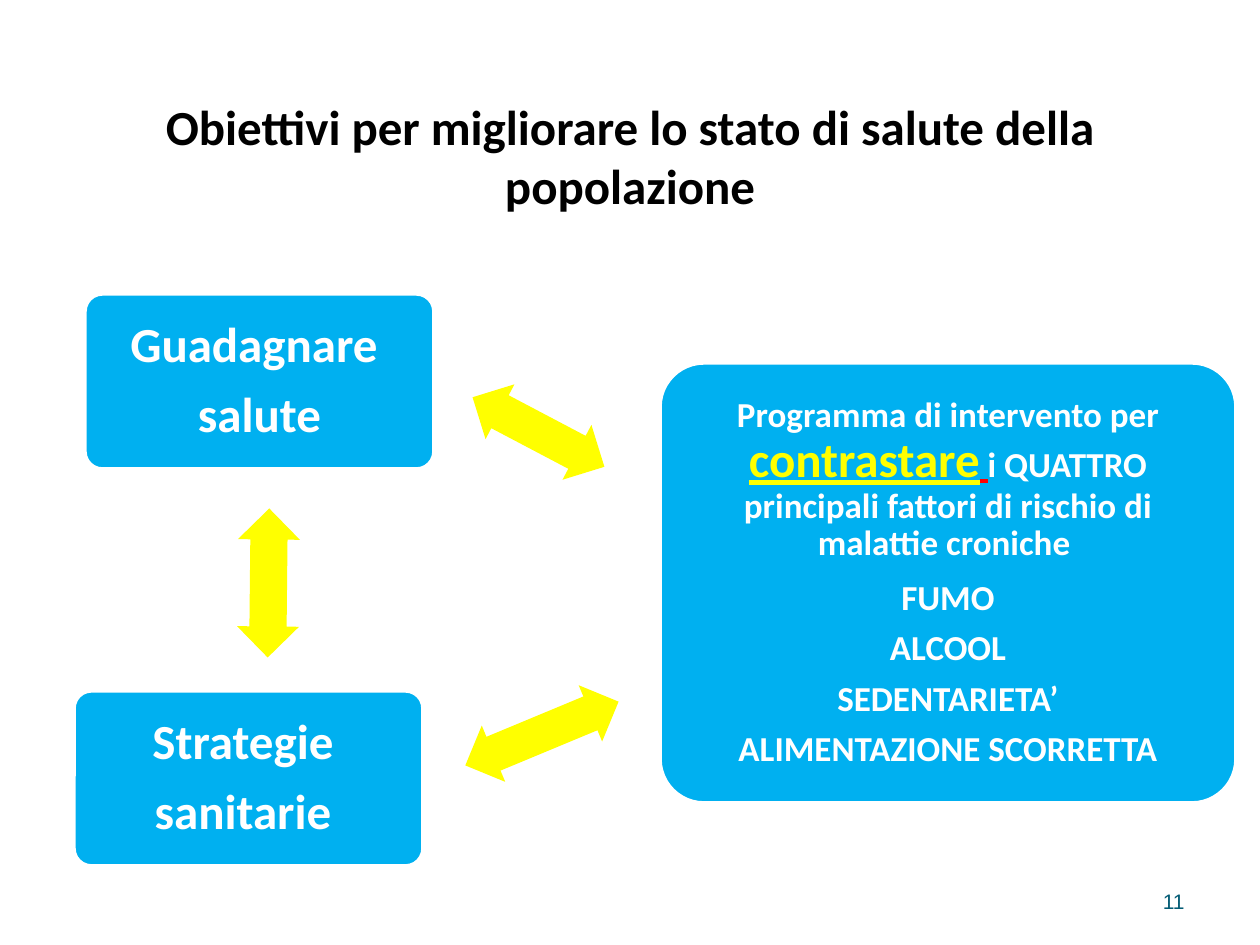
from pptx import Presentation
from pptx.dml.color import RGBColor
from pptx.enum.shapes import MSO_SHAPE
from pptx.enum.text import MSO_ANCHOR, MSO_AUTO_SIZE, PP_ALIGN
from pptx.util import Pt

PX = 914400 // 126
ROUNDED, ARROW = MSO_SHAPE.ROUNDED_RECTANGLE, MSO_SHAPE.LEFT_RIGHT_ARROW
MIDDLE, NO_FIT = MSO_ANCHOR.MIDDLE, MSO_AUTO_SIZE.NONE
CENTER, RIGHT = PP_ALIGN.CENTER, PP_ALIGN.RIGHT

BLACK = RGBColor(0x00, 0x00, 0x00)
WHITE = RGBColor(0xFF, 0xFF, 0xFF)
BLUE = RGBColor(0x00, 0xB0, 0xF0)
YELLOW = RGBColor(0xFF, 0xFF, 0x00)
RED = RGBColor(0xFF, 0x00, 0x00)
TEAL = RGBColor(0x04, 0x5C, 0x75)

# Text formats
LARGE = dict(name="Calibri", size=Pt(28), bold=True, color=WHITE)
SMALL = {**LARGE, "size": Pt(20)}
TITLE = {**LARGE, "color": BLACK}
KEYWORD = {**LARGE, "color": YELLOW, "underline": True}
GAP = {**SMALL, "color": RED, "underline": True}
NUMBER = dict(name="Arial", size=Pt(12), color=TEAL)

# Content: places are left, top, width, height in px
TITLE_AT = (63, 97, 1134, 117)
TITLE_TEXT = "Obiettivi per migliorare lo stato di salute della popolazione"
NUMBER_AT = (903, 876, 294, 50)
BOXES = [
    ((85, 294, 349, 175), [[("Guadagnare ", LARGE)], [("salute", LARGE)]]),
    ((74, 691, 349, 175), [[("Strategie ", LARGE)], [("sanitarie ", LARGE)]]),
    ((660, 363, 576, 440), [
        [("Programma di intervento per ", SMALL), ("contrastare", KEYWORD), (" ", GAP),
         ("i QUATTRO principali fattori di rischio di malattie croniche ", SMALL)],
        *[[(factor, SMALL)] for factor in
          ("FUMO", "ALCOOL", "SEDENTARIETA’", "ALIMENTAZIONE SCORRETTA")],
    ]),
]
ARROWS = [
    ((194, 552, 149, 62), 270.6),
    ((464, 401, 149, 62), 207.8),
    ((459, 703, 166, 61), 337.4),
]


def px(values):
    return [v * PX for v in values]


def place(sp, at):
    sp.left, sp.top, sp.width, sp.height = px(at)


def add_run(p, text, style):
    r = p.add_run()
    r.text = text
    for key, value in style.items():
        if key == "color":
            r.font.color.rgb = value
        else:
            setattr(r.font, key, value)


def write(tf, paragraphs, align):
    tf.word_wrap = True
    tf.auto_size = NO_FIT
    tf.vertical_anchor = MIDDLE
    for i, runs in enumerate(paragraphs):
        p = tf.add_paragraph() if i else tf.paragraphs[0]
        p.alignment = align
        for text, style in runs:
            add_run(p, text, style)


def add_filled(slide, kind, at, color):
    sp = slide.shapes.add_shape(kind, *px(at))
    sp.shadow.inherit = False
    sp.fill.solid()
    sp.fill.fore_color.rgb = color
    sp.line.fill.background()
    return sp


def add_box(slide, at, paragraphs):
    sp = add_filled(slide, ROUNDED, at, BLUE)
    sp.adjustments[0] = 0.1
    sp.line.color.rgb = WHITE
    sp.line.width = Pt(2)
    tf = sp.text_frame
    for side in ("left", "top", "right", "bottom"):
        setattr(tf, f"margin_{side}", 10 * PX)
    write(tf, paragraphs, CENTER)
    # The gap after a paragraph is 35% of its largest text
    for p in tf.paragraphs:
        p.line_spacing = 0.9
        p.space_after = Pt(0.35 * max(r.font.size.pt for r in p.runs))


def main():
    prs = Presentation()
    prs.slide_width, prs.slide_height = px((1260, 945))
    slide = prs.slides.add_slide(prs.slide_layouts[5])

    # Title
    title = slide.shapes.title
    place(title, TITLE_AT)
    write(title.text_frame, [[(TITLE_TEXT, TITLE)]], CENTER)

    # Boxes and the arrows between them
    for at, paragraphs in BOXES:
        add_box(slide, at, paragraphs)
    for at, angle in ARROWS:
        sp = add_filled(slide, ARROW, at, YELLOW)
        sp.adjustments[0], sp.adjustments[1] = 0.6, 0.5
        sp.rotation = angle

    # Slide number
    number = slide.shapes.add_textbox(*px(NUMBER_AT))
    write(number.text_frame, [[("11", NUMBER)]], RIGHT)

    prs.save("out.pptx")


if __name__ == "__main__":
    main()
